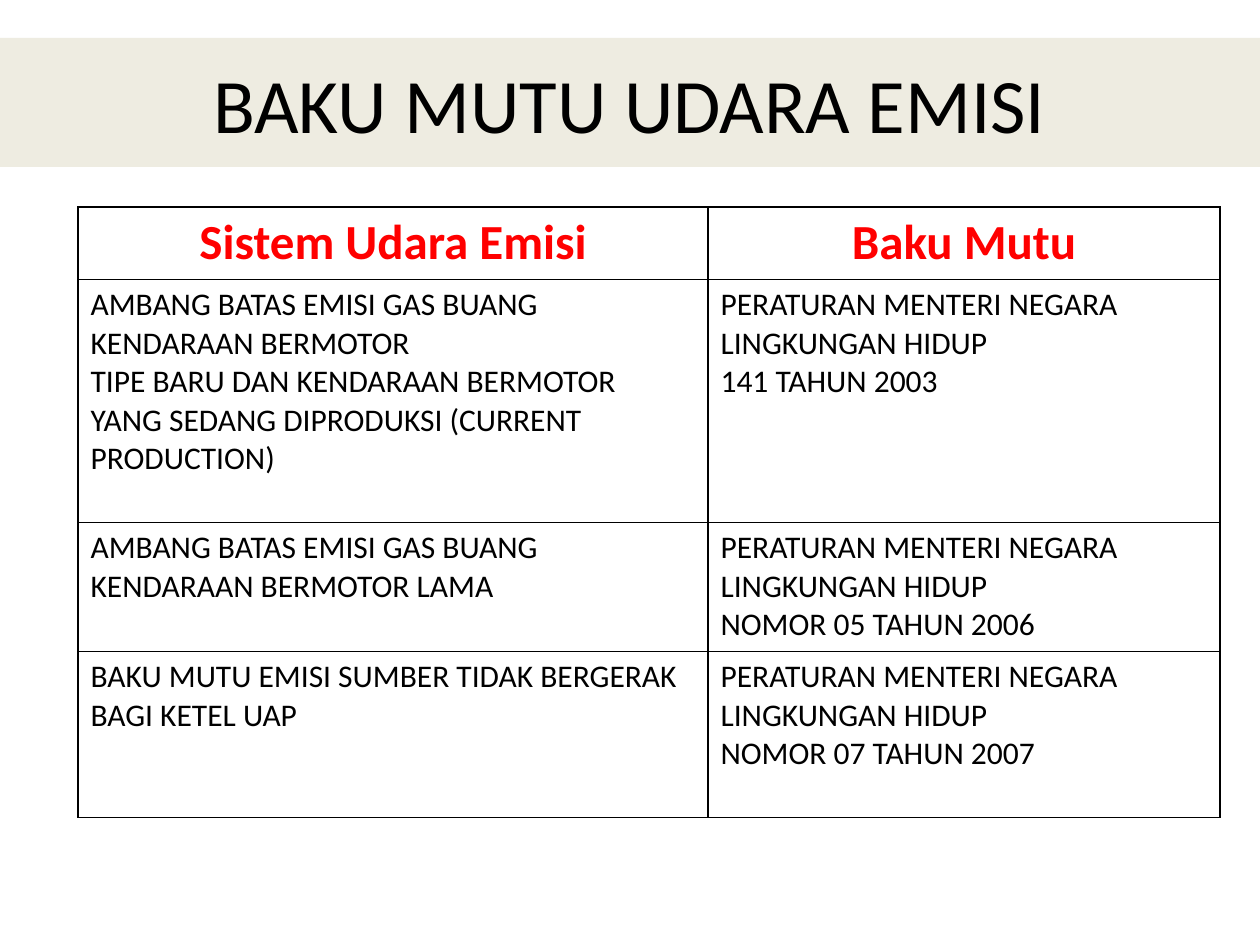
from lxml import etree
from pptx import Presentation, util as u
from pptx.dml.color import RGBColor
from pptx.enum import shapes, text
from pptx.oxml.ns import qn

PX_PER_INCH = 126
FONT = "Calibri"
COLORS = {"band": "EEECE1", "ink": "000000", "heading": "FF0000"}

HEADINGS = ["Sistem Udara Emisi", "Baku Mutu"]
MINISTRY = "PERATURAN MENTERI NEGARA LINGKUNGAN HIDUP"
RULES = [
    (["AMBANG BATAS EMISI GAS BUANG KENDARAAN BERMOTOR",
      "TIPE BARU DAN KENDARAAN BERMOTOR",
      "YANG SEDANG DIPRODUKSI (CURRENT PRODUCTION)"], "141 TAHUN 2003"),
    (["AMBANG BATAS EMISI GAS BUANG", "KENDARAAN BERMOTOR LAMA"],
     "NOMOR 05 TAHUN 2006"),
    (["BAKU MUTU EMISI SUMBER TIDAK BERGERAK BAGI KETEL UAP"],
     "NOMOR 07 TAHUN 2007"),
]
COLUMN_WIDTHS = [630, 512]
ROW_HEIGHTS = [72, 243, 129, 166]


def px(length):
    return round(length * u.Inches(1) / PX_PER_INCH)


def write(frame, lines, size, color="ink", bold=False, align=text.PP_ALIGN.LEFT):
    """Fill a text frame with one paragraph for each line."""
    frame.text = "\n".join(lines)
    for para in frame.paragraphs:
        para.alignment = align
        for span in para.runs:
            span.font.name = FONT
            span.font.size = u.Pt(size)
            span.font.bold = bold
            span.font.color.rgb = RGBColor.from_string(COLORS[color])


def add_borders(cell):
    """Draw a thin line on each side of a cell."""
    props = cell._tc.get_or_add_tcPr()
    for index, side in enumerate(["lnL", "lnR", "lnT", "lnB"]):
        line = etree.Element(qn(f"a:{side}"), w=str(u.Pt(1)))
        fill = etree.SubElement(line, qn("a:solidFill"))
        etree.SubElement(fill, qn("a:srgbClr"), val=COLORS["ink"])
        props.insert(index, line)


def add_title(page, left, top, width, height):
    band = page.shapes.add_shape(shapes.MSO_SHAPE.RECTANGLE,
                                 px(left), px(top), px(width), px(height))
    band.shadow.inherit = False
    band.fill.solid()
    band.fill.fore_color.rgb = RGBColor.from_string(COLORS["band"])
    band.line.fill.background()
    band.text_frame.word_wrap = True
    band.text_frame.vertical_anchor = text.MSO_ANCHOR.MIDDLE
    write(band.text_frame, ["BAKU MUTU UDARA EMISI"], 44,
          align=text.PP_ALIGN.CENTER)


def add_rules_table(page, left, top):
    table = page.shapes.add_table(
        len(ROW_HEIGHTS), len(COLUMN_WIDTHS), px(left), px(top),
        px(sum(COLUMN_WIDTHS)), px(sum(ROW_HEIGHTS))).table
    table.first_row = table.horz_banding = False
    for column, width in zip(table.columns, COLUMN_WIDTHS):
        column.width = px(width)
    for row, height in zip(table.rows, ROW_HEIGHTS):
        row.height = px(height)

    # Heading row
    for column, heading in enumerate(HEADINGS):
        write(table.cell(0, column).text_frame, [heading], 28, "heading",
              bold=True, align=text.PP_ALIGN.CENTER)

    # Emission systems and their regulations
    for row, (system, number) in enumerate(RULES, start=1):
        write(table.cell(row, 0).text_frame, system, 18)
        write(table.cell(row, 1).text_frame, [MINISTRY, number], 18)

    for cell in table.iter_cells():
        cell.fill.background()
        add_borders(cell)


def main():
    deck = Presentation()
    deck.slide_width, deck.slide_height = u.Inches(10), u.Inches(7.5)
    page = deck.slides.add_slide(deck.slide_layouts[6])
    add_title(page, 0, 38, 1260, 129)
    add_rules_table(page, 78, 207)
    deck.save("out.pptx")


if __name__ == "__main__":
    main()
